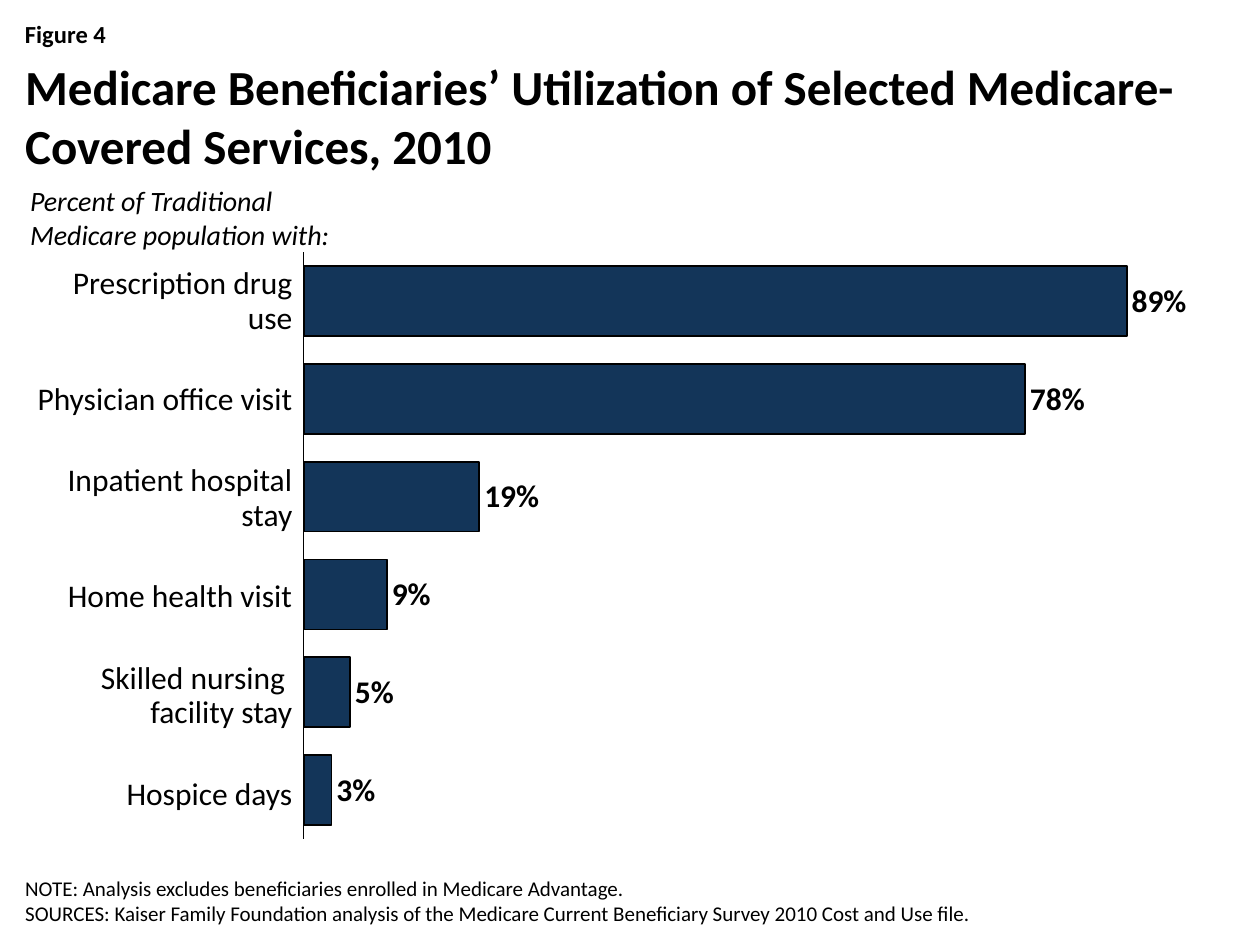
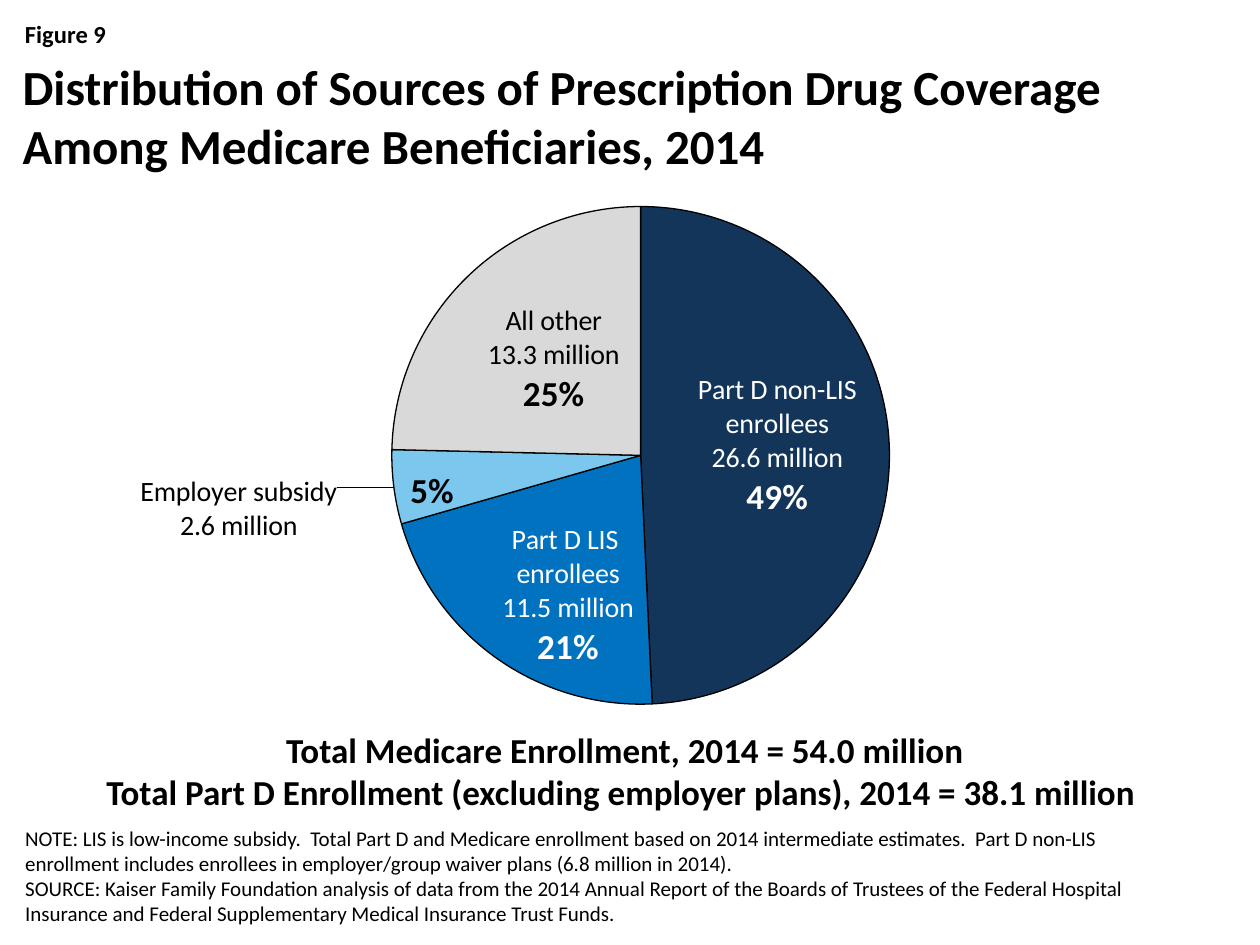
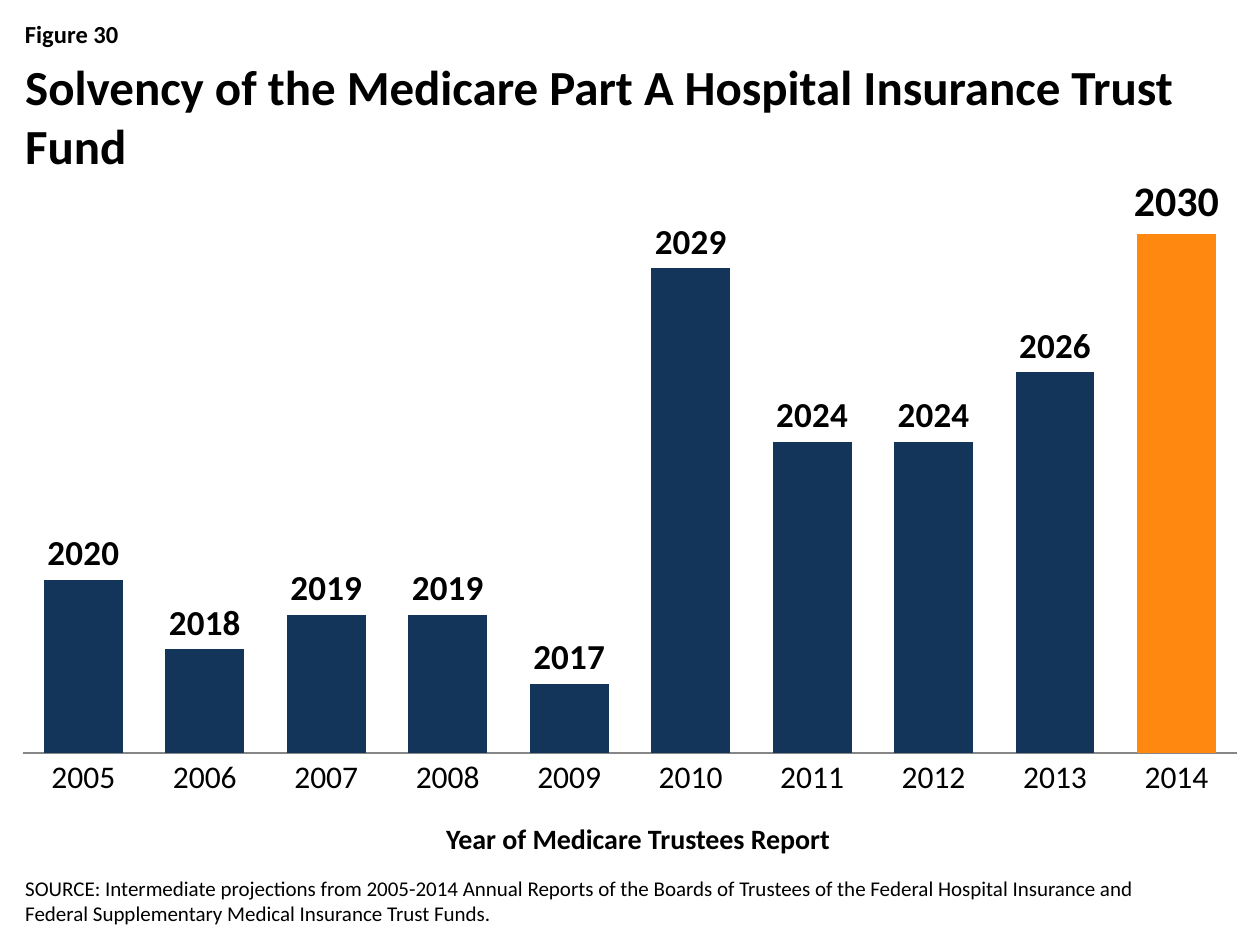
from dataclasses import dataclass

from lxml import etree
from pptx import Presentation
from pptx.chart.data import CategoryChartData
from pptx.dml.color import RGBColor
from pptx.enum.chart import XL_CHART_TYPE, XL_LABEL_POSITION, XL_TICK_LABEL_POSITION, XL_TICK_MARK
from pptx.enum.text import MSO_ANCHOR, MSO_AUTO_SIZE, PP_ALIGN
from pptx.oxml.ns import qn
from pptx.util import Inches, Pt

LEFT, CENTER, RIGHT = PP_ALIGN.LEFT, PP_ALIGN.CENTER, PP_ALIGN.RIGHT
TOP, MIDDLE, BOTTOM = MSO_ANCHOR.TOP, MSO_ANCHOR.MIDDLE, MSO_ANCHOR.BOTTOM
NO_AUTOFIT = MSO_AUTO_SIZE.NONE
BAR, COLUMN, PIE = XL_CHART_TYPE.BAR_CLUSTERED, XL_CHART_TYPE.COLUMN_CLUSTERED, XL_CHART_TYPE.PIE
LABEL_OUTSIDE, LABEL_CENTER = XL_LABEL_POSITION.OUTSIDE_END, XL_LABEL_POSITION.CENTER
NO_TICK_LABELS = XL_TICK_LABEL_POSITION.NONE
NO_TICK_MARKS = XL_TICK_MARK.NONE
TITLE_AND_CONTENT = 1
PLAIN_TABLE_STYLE = "{2D5ABB26-0587-4C30-8999-92F81FD0307C}"


@dataclass(frozen=True)
class Theme:
    font: str = "Calibri"
    black: RGBColor = RGBColor(0x00, 0x00, 0x00)
    white: RGBColor = RGBColor(0xFF, 0xFF, 0xFF)
    navy: RGBColor = RGBColor(0x13, 0x35, 0x59)
    blue: RGBColor = RGBColor(0x00, 0x72, 0xC0)
    sky: RGBColor = RGBColor(0x7B, 0xC7, 0xED)
    gray: RGBColor = RGBColor(0xD9, 0xD9, 0xD9)
    axis_gray: RGBColor = RGBColor(0x86, 0x86, 0x86)
    orange: RGBColor = RGBColor(0xFF, 0x88, 0x11)
    title: int = 28
    highlight: int = 24
    strong: int = 20
    label: int = 18
    text: int = 16
    figure: int = 14
    note: int = 12


THEME = Theme()

FIGURE_BOX = (0.1, 0.1, 9.8, 0.34)
TITLE_BOX = (0.1, 0.4, 9.8, 1)
NOTE_BOX = (0.1, 6.8, 9.1, 0.6)

# Label, share of beneficiaries; top to bottom
SERVICES = [
    ("Prescription drug use", 0.89),
    ("Physician office visit", 0.78),
    ("Inpatient hospital stay", 0.19),
    ("Home health visit", 0.09),
    ("Skilled nursing \nfacility stay", 0.05),
    ("Hospice days", 0.03),
]

# Category, millions, slice colour, label colour, label lines, percent, label shift
COVERAGE = [
    ("Part D non-LIS enrollees", 26.6, THEME.navy, THEME.white,
     ["Part D non-LIS enrollees", "26.6 million"], "49%", (0.01, -0.01)),
    ("Part D LIS enrollees", 11.5, THEME.blue, THEME.white,
     ["Part D LIS ", "enrollees", "11.5 million"], "21%", (0, 0.06)),
    ("Employer subsidy", 2.6, THEME.sky, THEME.black,
     ["Employer subsidy", "2.6 million"], None, (-0.04, -0.02)),
    ("All other", 13.3, THEME.gray, THEME.black,
     ["All other", "13.3 million"], "25%", (0, -0.01)),
]

REPORT_YEARS = range(2005, 2015)
INSOLVENCY_YEARS = [2020, 2018, 2019, 2019, 2017, 2029, 2024, 2024, 2026, 2030]


def inches(box):
    return [Inches(length) for length in box]


def style_font(font, size, bold=False, italic=False, color=THEME.black):
    font.name, font.size, font.bold, font.italic = THEME.font, Pt(size), bold, italic
    font.color.rgb = color


def fill_text(frame, text, size, align=LEFT, anchor=TOP, spacing=None, **style):
    frame.word_wrap = True
    frame.vertical_anchor = anchor
    frame.text = text
    for paragraph in frame.paragraphs:
        paragraph.alignment = align
        paragraph.space_before = Pt(0)
        paragraph.line_spacing = spacing
        style_font(paragraph.font, size, **style)


def add_text(slide, box, text, size, **style):
    shape = slide.shapes.add_textbox(*inches(box))
    fill_text(shape.text_frame, text, size, **style)


def fill_placeholder(shape, box, text, size, **style):
    shape.left, shape.top, shape.width, shape.height = inches(box)
    frame = shape.text_frame
    frame.auto_size = NO_AUTOFIT
    fill_text(frame, text, size, **style)
    for paragraph in frame.paragraphs:
        properties = paragraph._p.get_or_add_pPr()
        properties.set("marL", "0")
        properties.set("indent", "0")
        properties.find(qn("a:defRPr")).addprevious(etree.Element(qn("a:buNone")))


def add_figure_slide(presentation, figure, title, note, title_box=TITLE_BOX):
    """Add a slide with the shared figure number, title and source note."""
    slide = presentation.slides.add_slide(presentation.slide_layouts[TITLE_AND_CONTENT])
    add_text(slide, FIGURE_BOX, f"Figure {figure}", THEME.figure, bold=True)
    fill_placeholder(slide.shapes.title, title_box, title, THEME.title, bold=True)
    fill_placeholder(slide.placeholders[1], NOTE_BOX, note, THEME.note, anchor=BOTTOM)
    return slide


def fill_shape(format_, color):
    format_.fill.solid()
    format_.fill.fore_color.rgb = color


def set_line(line, color, width):
    line.color.rgb = color
    line.width = Pt(width)


def set_layout(parent, index, **settings):
    """Give a chart element a manual layout as its child number index."""
    for layout in parent.findall(qn("c:layout")):
        parent.remove(layout)
    layout = etree.Element(qn("c:layout"))
    manual = etree.SubElement(layout, qn("c:manualLayout"))
    for name, value in settings.items():
        etree.SubElement(manual, qn(f"c:{name}")).set("val", str(value))
    parent.insert(index, layout)


def add_chart(slide, kind, box, plot_box, categories, values, number_format):
    """Add a one-series chart; plot_box is in inches from the chart's corner."""
    data = CategoryChartData(number_format=number_format)
    data.categories = categories
    data.add_series("Series 1", values)
    chart = slide.shapes.add_chart(kind, *inches(box), data).chart
    chart.has_legend = chart.has_title = False
    style_font(chart.font, THEME.label)
    x, y, width, height = plot_box
    chart_width, chart_height = box[2:]
    set_layout(chart.element.find(f".//{qn('c:plotArea')}"), 0, layoutTarget="inner",
               xMode="edge", yMode="edge", x=x / chart_width, y=y / chart_height,
               w=width / chart_width, h=height / chart_height)
    labels = chart.plots[0].series[0].data_labels
    labels.show_value = True
    labels.number_format = number_format
    labels.number_format_is_linked = False
    labels.position = LABEL_OUTSIDE
    return chart


def style_bars(chart, gap, minimum, maximum, label_size, axis_color, axis_width):
    """Format a one-series bar chart with a hidden value axis; return its series."""
    value_axis, category_axis = chart.value_axis, chart.category_axis
    value_axis.minimum_scale, value_axis.maximum_scale = minimum, maximum
    value_axis.has_major_gridlines = False
    value_axis.visible = False
    category_axis.major_tick_mark = NO_TICK_MARKS
    set_line(category_axis.format.line, axis_color, axis_width)
    plot = chart.plots[0]
    plot.gap_width = gap
    plot.vary_by_categories = False
    series = plot.series[0]
    fill_shape(series.format, THEME.navy)
    style_font(series.data_labels.font, label_size, bold=True)
    return series


def add_service_labels(slide, box):
    width, height = box[2:]
    table = slide.shapes.add_table(len(SERVICES), 1, *inches(box)).table
    table.first_row = table.horz_banding = False
    table._tbl.tblPr.find(qn("a:tableStyleId")).text = PLAIN_TABLE_STYLE
    table.columns[0].width = Inches(width)
    for row, (service, _) in enumerate(SERVICES):
        table.rows[row].height = Inches(height / len(SERVICES))
        cell = table.cell(row, 0)
        cell.fill.background()
        cell.vertical_anchor = MIDDLE
        fill_text(cell.text_frame, service, THEME.label, align=RIGHT, anchor=MIDDLE, spacing=0.9)


def add_service_chart(slide, box):
    shares = [share for _, share in reversed(SERVICES)]
    categories = [str(number) for number in range(1, len(shares) + 1)]
    chart = add_chart(slide, BAR, box, (0.08, 0, 7.34, 4.66), categories, shares, "0%")
    series = style_bars(chart, 40, 0, 1, THEME.label, THEME.black, 0.25)
    chart.category_axis.tick_label_position = NO_TICK_LABELS
    set_line(series.format.line, THEME.black, 1)


def add_slice_label(frame, lines, percent, color):
    frame.text = "\n".join(lines + ([percent] if percent else []))
    for paragraph in frame.paragraphs:
        strong = paragraph.text == percent
        size = THEME.strong if strong else THEME.text
        for run in paragraph.runs:
            style_font(run.font, size, bold=strong, color=color)


def add_coverage_chart(slide, box):
    categories = [entry[0] for entry in COVERAGE]
    millions = [entry[1] for entry in COVERAGE]
    chart = add_chart(slide, PIE, box, (3.01, 0.46, 3.95, 3.95), categories, millions, "0.0")
    series = chart.plots[0].series[0]
    series.data_labels.show_category_name = True
    style_font(series.data_labels.font, THEME.text)
    set_line(series.format.line, THEME.black, 0.75)
    for index, (_, _, fill, color, lines, percent, _) in enumerate(COVERAGE):
        point = series.points[index]
        fill_shape(point.format, fill)
        set_line(point.format.line, THEME.black, 0.75)
        label = point.data_label
        add_slice_label(label.text_frame, lines, percent, color)
        label.position = LABEL_CENTER if percent else LABEL_OUTSIDE
    for label, entry in zip(chart.element.iter(qn("c:dLbl")), COVERAGE):
        x, y = entry[-1]
        set_layout(label, 1, x=x, y=y)


def add_solvency_chart(slide, box):
    categories = [str(year) for year in REPORT_YEARS]
    chart = add_chart(slide, COLUMN, box, (0.08, 0.25, 9.64, 4.4),
                      categories, INSOLVENCY_YEARS, "General")
    series = style_bars(chart, 54, 2015, 2031, THEME.strong, THEME.axis_gray, 1)
    latest = series.points[len(categories) - 1]
    fill_shape(latest.format, THEME.orange)
    style_font(latest.data_label.font, THEME.highlight, bold=True)
    latest.data_label.position = LABEL_OUTSIDE


def build_utilization_slide(presentation):
    slide = add_figure_slide(
        presentation, 4,
        "Medicare Beneficiaries’ Utilization of Selected Medicare-Covered Services, 2010",
        "NOTE: Analysis excludes beneficiaries enrolled in Medicare Advantage.\n"
        "SOURCES: Kaiser Family Foundation analysis of the Medicare Current Beneficiary Survey "
        "2010 Cost and Use file.")
    add_text(slide, (0.14, 1.41, 2.95, 0.64),
             "Percent of Traditional \vMedicare population with:", THEME.text, italic=True)
    add_service_chart(slide, (2.33, 2, 7.57, 4.7))
    add_service_labels(slide, (0.13, 2, 2.29, 4.7))


def build_coverage_slide(presentation):
    slide = add_figure_slide(
        presentation, 9,
        "Distribution of Sources of Prescription Drug Coverage Among Medicare Beneficiaries, 2014",
        "NOTE: LIS is low-income subsidy.  Total Part D and Medicare enrollment based on 2014 "
        "intermediate estimates.  Part D non-LIS enrollment includes enrollees in employer/group "
        "waiver plans (6.8 million in 2014).\n"
        "SOURCE: Kaiser Family Foundation analysis of data from the 2014 Annual Report of the "
        "Boards of Trustees of the Federal Hospital Insurance and Federal Supplementary Medical "
        "Insurance Trust Funds.",
        title_box=(0.08, 0.4, 9.85, 1))
    add_coverage_chart(slide, (0.1, 1.18, 9.8, 5.2))
    add_text(slide, (0.5, 5.73, 8.92, 0.77),
             "Total Medicare Enrollment, 2014 = 54.0 million\v"
             "Total Part D Enrollment (excluding employer plans), 2014 = 38.1 million ",
             THEME.strong, align=CENTER, bold=True)
    add_text(slide, (3, 3.67, 0.86, 0.44), "5%", THEME.strong, align=CENTER, bold=True)


def build_solvency_slide(presentation):
    slide = add_figure_slide(
        presentation, 30,
        "Solvency of the Medicare Part A Hospital Insurance Trust Fund",
        "SOURCE: Intermediate projections from 2005-2014 Annual Reports of the Boards of Trustees "
        "of the Federal Hospital Insurance and Federal Supplementary Medical Insurance Trust Funds.")
    add_solvency_chart(slide, (0.1, 1.33, 9.8, 5.37))
    add_text(slide, (3.42, 6.47, 3.29, 0.37), "Year of Medicare Trustees Report",
             THEME.text, align=CENTER, bold=True)


def main():
    presentation = Presentation()
    presentation.slide_width, presentation.slide_height = Inches(10), Inches(7.5)
    build_utilization_slide(presentation)
    build_coverage_slide(presentation)
    build_solvency_slide(presentation)
    presentation.save("out.pptx")


if __name__ == "__main__":
    main()
